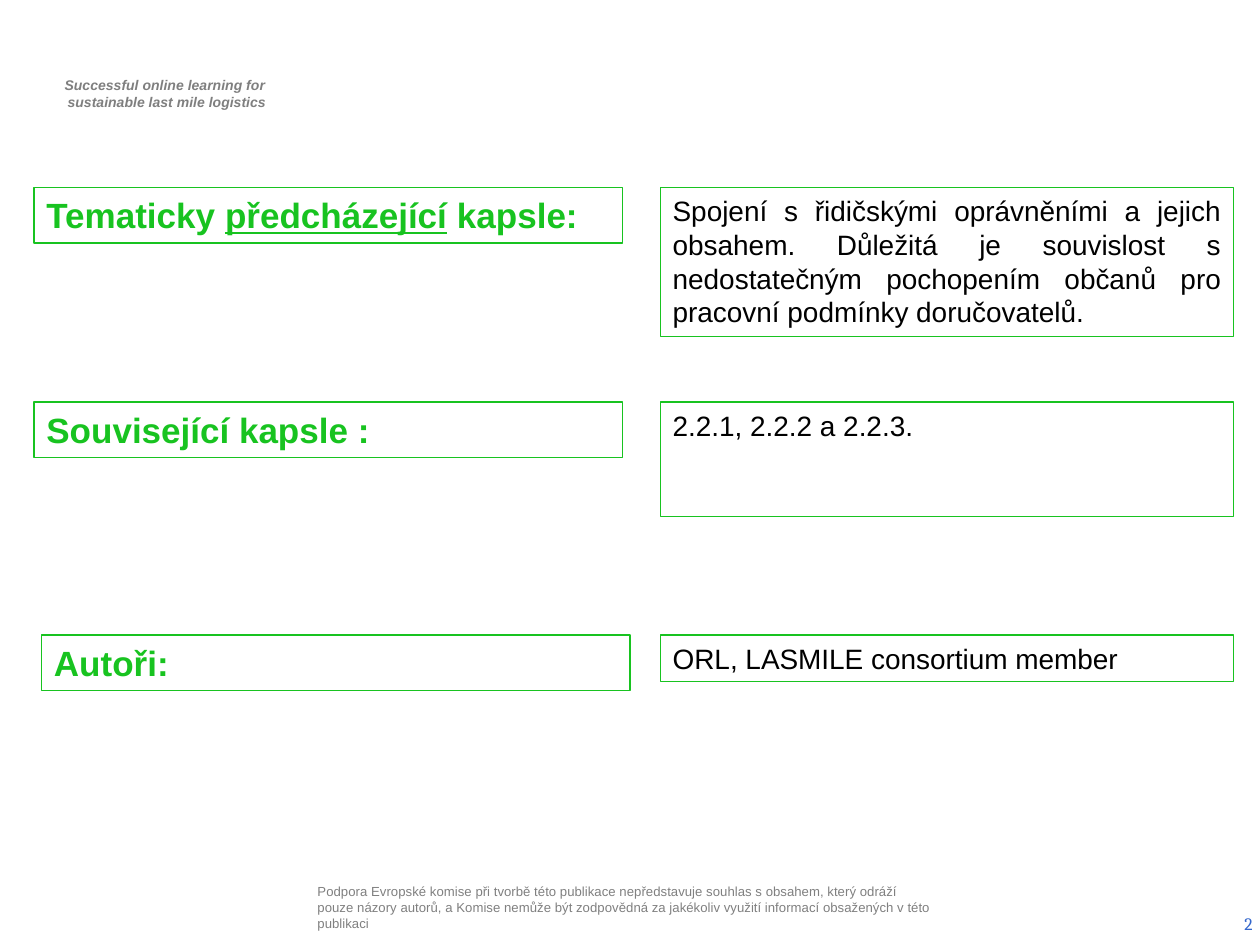
from dataclasses import dataclass

from pptx import Presentation
from pptx.dml.color import RGBColor
from pptx.enum.shapes import MSO_SHAPE
from pptx.enum.text import MSO_ANCHOR, PP_ALIGN
from pptx.util import Inches, Pt

# The slide is a grid of 100 columns by 75 rows
COLUMNS, ROWS = 100, 75
WIDTH, HEIGHT = Inches(10), Inches(7.5)


@dataclass(frozen=True)
class Theme:
    green: RGBColor = RGBColor(0x18, 0xC3, 0x20)
    white: RGBColor = RGBColor(0xFF, 0xFF, 0xFF)
    black: RGBColor = RGBColor(0, 0, 0)
    motto_grey: RGBColor = RGBColor(0x7F, 0x7F, 0x7F)
    note_grey: RGBColor = RGBColor(0x80, 0x80, 0x80)
    blue: RGBColor = RGBColor(0x33, 0x66, 0xCC)
    sans: str = "Arial"
    serif: str = "Cambria"
    label_size: float = 20
    answer_size: float = 16
    number_size: float = 10
    motto_size: float = 8
    note_size: float = 7.5
    border: float = 0.75


THEME = Theme()
LABEL = dict(name=THEME.sans, size=Pt(THEME.label_size), bold=True)
ANSWER = dict(name=THEME.sans, size=Pt(THEME.answer_size), bold=False)
MOTTO = dict(name=THEME.sans, size=Pt(THEME.motto_size), bold=True, italic=True)
NOTE = dict(name=THEME.sans, size=Pt(THEME.note_size))
NUMBER = dict(name=THEME.serif, size=Pt(THEME.number_size))

# Each row: top, label column, label spans (text, underlined),
# answer, answer height, answer alignment
LABEL_COLUMN, LABEL_WIDTH, LABEL_HEIGHT = 2.7, 46.7, 4.4
ANSWER_COLUMN, ANSWER_WIDTH = 52.4, 45.5
CAPSULE_ROWS = [
    (14.9, LABEL_COLUMN,
     [("Tematicky ", False), ("předcházející", True), (" kapsle:", False)],
     "Spojení s řidičskými oprávněními a jejich obsahem. Důležitá je souvislost "
     "s nedostatečným pochopením občanů pro pracovní podmínky doručovatelů.",
     11.8, PP_ALIGN.JUSTIFY),
    (31.9, LABEL_COLUMN, [("Související kapsle :", False)],
     "2.2.1, 2.2.2 a 2.2.3.", 9.1, PP_ALIGN.JUSTIFY),
    (50.4, LABEL_COLUMN + 0.6, [("Autoři:", False)],
     "ORL, LASMILE consortium member", 3.7, PP_ALIGN.LEFT),
]


def place(column, row, columns, rows):
    """Turn grid cells into left, top, width and height."""
    return (int(WIDTH * column / COLUMNS), int(HEIGHT * row / ROWS),
            int(WIDTH * columns / COLUMNS), int(HEIGHT * rows / ROWS))


def write(box, lines, style, color, align=PP_ALIGN.LEFT, anchor=MSO_ANCHOR.TOP,
          inset=None, indent=None):
    """Fill a box with paragraphs, each a list of (text, underlined) spans."""
    frame = box.text_frame
    frame.word_wrap = True
    frame.vertical_anchor = anchor
    if inset is not None:
        for side in ("left", "top", "right", "bottom"):
            setattr(frame, f"margin_{side}", Inches(inset))
    for index, spans in enumerate(lines):
        para = frame.add_paragraph() if index else frame.paragraphs[0]
        para.alignment = align
        if indent is not None:
            para._p.get_or_add_pPr().set("marL", str(Inches(indent)))
        for text, underlined in spans:
            span = para.add_run()
            span.text = text
            for key, value in style.items():
                setattr(span.font, key, value)
            span.font.color.rgb = color
            if underlined:
                span.font.underline = True


def add_text(page, area, lines, style, color, **layout):
    box = page.shapes.add_textbox(*place(*area))
    write(box, [[(line, False)] for line in lines], style, color, **layout)


def add_frame(page, area, spans, style, color, align=PP_ALIGN.LEFT):
    """Add a white rectangle with a thin green border."""
    box = page.shapes.add_shape(MSO_SHAPE.RECTANGLE, *place(*area))
    box.shadow.inherit = False
    box.fill.solid()
    box.fill.fore_color.rgb = THEME.white
    box.line.color.rgb = THEME.green
    box.line.width = Pt(THEME.border)
    write(box, [spans], style, color, align)


def main():
    deck = Presentation()
    deck.slide_width, deck.slide_height = WIDTH, HEIGHT
    page = deck.slides.add_slide(deck.slide_layouts[6])

    # Motto, disclaimer and page number
    add_text(page, (2.9, 5.6, 20.3, 3.7),
             ["Successful online learning for ", "sustainable last mile logistics"],
             MOTTO, THEME.motto_grey, align=PP_ALIGN.CENTER, indent=0.04)
    add_text(page, (24.8, 69.5, 49.6, 5),
             ["Podpora Evropské komise při tvorbě této publikace nepředstavuje souhlas "
              "s obsahem, který odráží pouze názory autorů, a Komise nemůže být "
              "zodpovědná za jakékoliv využití informací obsažených v této publikaci"],
             NOTE, THEME.note_grey, anchor=MSO_ANCHOR.MIDDLE, inset=0.04)
    add_text(page, (77.1, 71.3, 23.3, 4), ["2"], NUMBER, THEME.blue,
             align=PP_ALIGN.RIGHT, anchor=MSO_ANCHOR.MIDDLE)

    # Labels with their answers
    for top, column, spans, answer, height, align in CAPSULE_ROWS:
        add_frame(page, (column, top, LABEL_WIDTH, LABEL_HEIGHT),
                  spans, LABEL, THEME.green)
        add_frame(page, (ANSWER_COLUMN, top, ANSWER_WIDTH, height),
                  [(answer, False)], ANSWER, THEME.black, align)

    deck.save("out.pptx")


if __name__ == "__main__":
    main()
